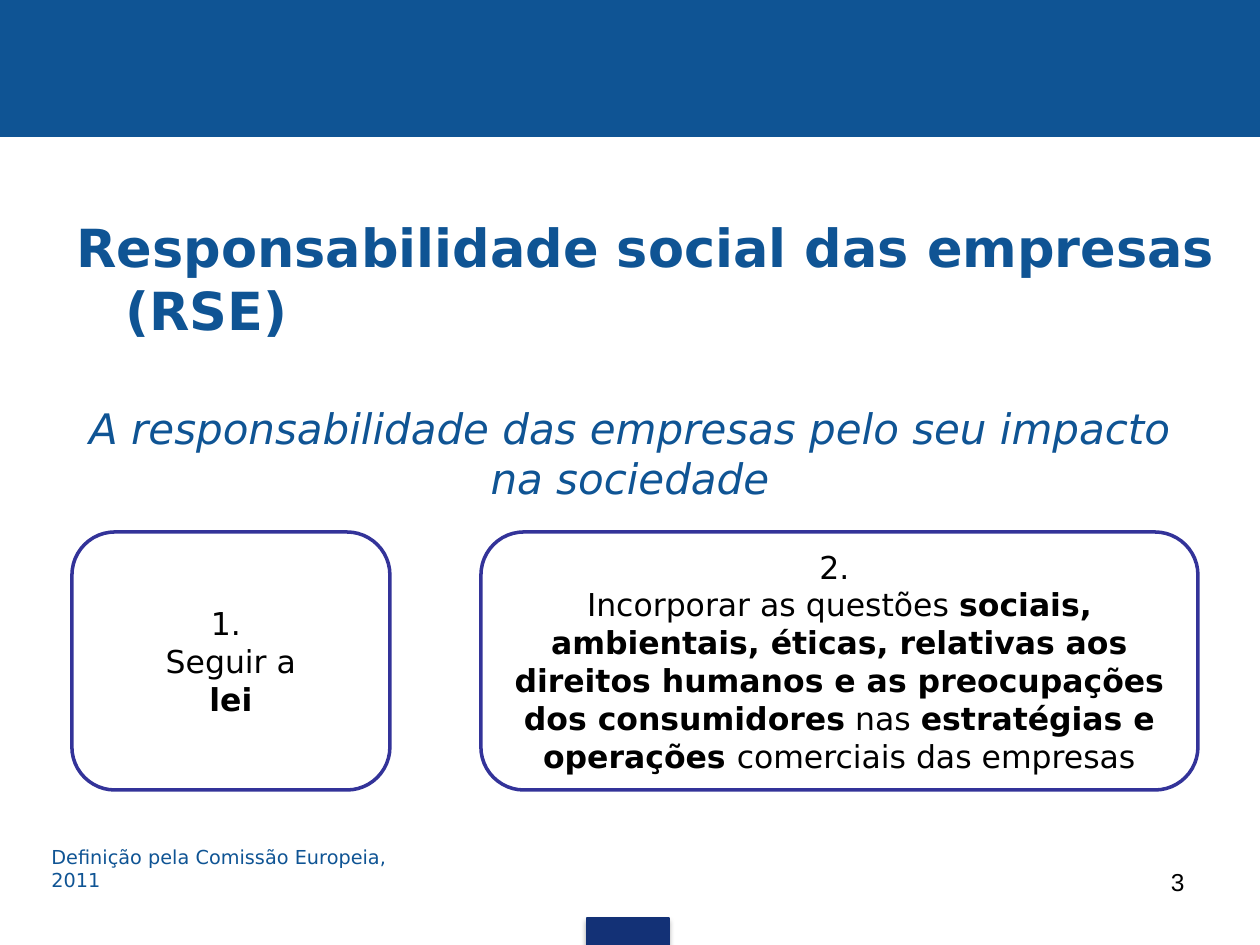
"""Build the slide on corporate social responsibility."""
import pptx
import pptx.dml.color
import pptx.enum.shapes
import pptx.enum.text
import pptx.oxml
import pptx.oxml.ns
import pptx.util

SCALE = 914400 / 126
BLUE, NAVY, EDGE = "0F5494", "133176", "333399"
BLACK, WHITE = "000000", "FFFFFF"
KIND = pptx.enum.shapes.MSO_SHAPE
ALIGN = pptx.enum.text.PP_ALIGN
MIDDLE = pptx.enum.text.MSO_ANCHOR.MIDDLE


def px(size):
    return pptx.util.Emu(round(size * SCALE))


def paint(target, color):
    target.rgb = pptx.dml.color.RGBColor.from_string(color)


def apply(target, values):
    for name, value in values.items():
        setattr(target, name, value)


def place(shape, left, top, width, height):
    apply(shape, dict(left=px(left), top=px(top), width=px(width), height=px(height)))


def write(shape, lines, size, color, align=ALIGN.LEFT, face="DejaVu Sans", **style):
    """Fill a shape with lines, each a list of runs that alternate plain and bold."""
    frame = shape.text_frame
    apply(frame, dict(word_wrap=True, auto_size=pptx.enum.text.MSO_AUTO_SIZE.NONE))
    for index, parts in enumerate(lines):
        para = frame.add_paragraph() if index else frame.paragraphs[0]
        apply(para, dict(alignment=align, space_before=pptx.util.Pt(0)))
        for place_no, part in enumerate(parts):
            if not part:
                continue
            run = para.add_run()
            run.text = part
            look = dict(name=face, size=pptx.util.Pt(size), bold=place_no % 2 == 1)
            apply(run.font, {**look, **style})
            paint(run.font.color, color)
    return frame


def indent(frame, left, first):
    """Set the indents of the first paragraph and take its bullet away."""
    props = frame.paragraphs[0]._p.get_or_add_pPr()
    props.set("marL", str(px(left)))
    props.set("indent", str(px(first)))
    props.append(pptx.oxml.parse_xml(f"<a:buNone {pptx.oxml.ns.nsdecls('a')}/>"))


def block(slide, kind, area, fill, line, weight):
    shape = slide.shapes.add_shape(kind, *map(px, area))
    shape.shadow.inherit = False
    shape.fill.solid()
    paint(shape.fill.fore_color, fill)
    paint(shape.line.color, line)
    shape.line.width = pptx.util.Pt(weight)
    return shape


def shade(shape):
    """Give a shape a soft shadow straight below it."""
    effects = shape._element.spPr.find(pptx.oxml.ns.qn("a:effectLst"))
    effects.append(pptx.oxml.parse_xml(
        f'<a:outerShdw {pptx.oxml.ns.nsdecls("a")} blurRad="39370" dist="22860" '
        'dir="5400000" rotWithShape="0"><a:srgbClr val="000000">'
        '<a:alpha val="35000"/></a:srgbClr></a:outerShdw>'))


def card(slide, left, width, lines):
    area = (left, 532, width, 258)
    shape = block(slide, KIND.ROUNDED_RECTANGLE, area, WHITE, EDGE, 2)
    frame = write(shape, lines, 18, BLACK, ALIGN.CENTER)
    frame.vertical_anchor = MIDDLE


def label(slide, area, text, size, color, **style):
    shape = slide.shapes.add_textbox(*map(px, area))
    write(shape, [[text]], size, color, **style)


def main():
    deck = pptx.Presentation()
    apply(deck, dict(slide_width=px(1260), slide_height=px(945)))
    slide = deck.slides.add_slide(deck.slide_layouts[1])
    title, body = slide.placeholders

    block(slide, KIND.RECTANGLE, (0, 0, 1260, 136), BLUE, BLUE, 0.75)
    shade(block(slide, KIND.RECTANGLE, (587, 918, 82, 27), NAVY, NAVY, 0.75))

    place(title, 64, 214, 1171, 129)
    frame = write(title, [["Responsabilidade social das empresas (RSE)"]],
                  30, BLUE, bold=True)
    frame.vertical_anchor = MIDDLE
    indent(frame, 49, -49)

    place(body, 63, 396, 1134, 129)
    frame = write(
        body, [["A responsabilidade das empresas pelo seu impacto na sociedade"]],
        24, BLUE, ALIGN.CENTER, italic=True)
    indent(frame, 0, 0)

    card(slide, 72, 318, [["1. "], ["Seguir a"], ["", "lei"]])
    card(slide, 481, 717, [["2. "], [
        "Incorporar as questões ",
        "sociais, ambientais, éticas, relativas aos direitos humanos "
        "e as preocupações dos consumidores",
        " nas ",
        "estratégias e operações ",
        "comerciais das empresas"]])

    label(slide, (39, 839, 407, 37), "Definição pela Comissão Europeia, 2011", 11, BLUE)
    label(slide, (903, 861, 294, 66), "3", 14, BLACK, align=ALIGN.RIGHT, face="Arial")
    deck.save("out.pptx")


if __name__ == "__main__":
    main()
